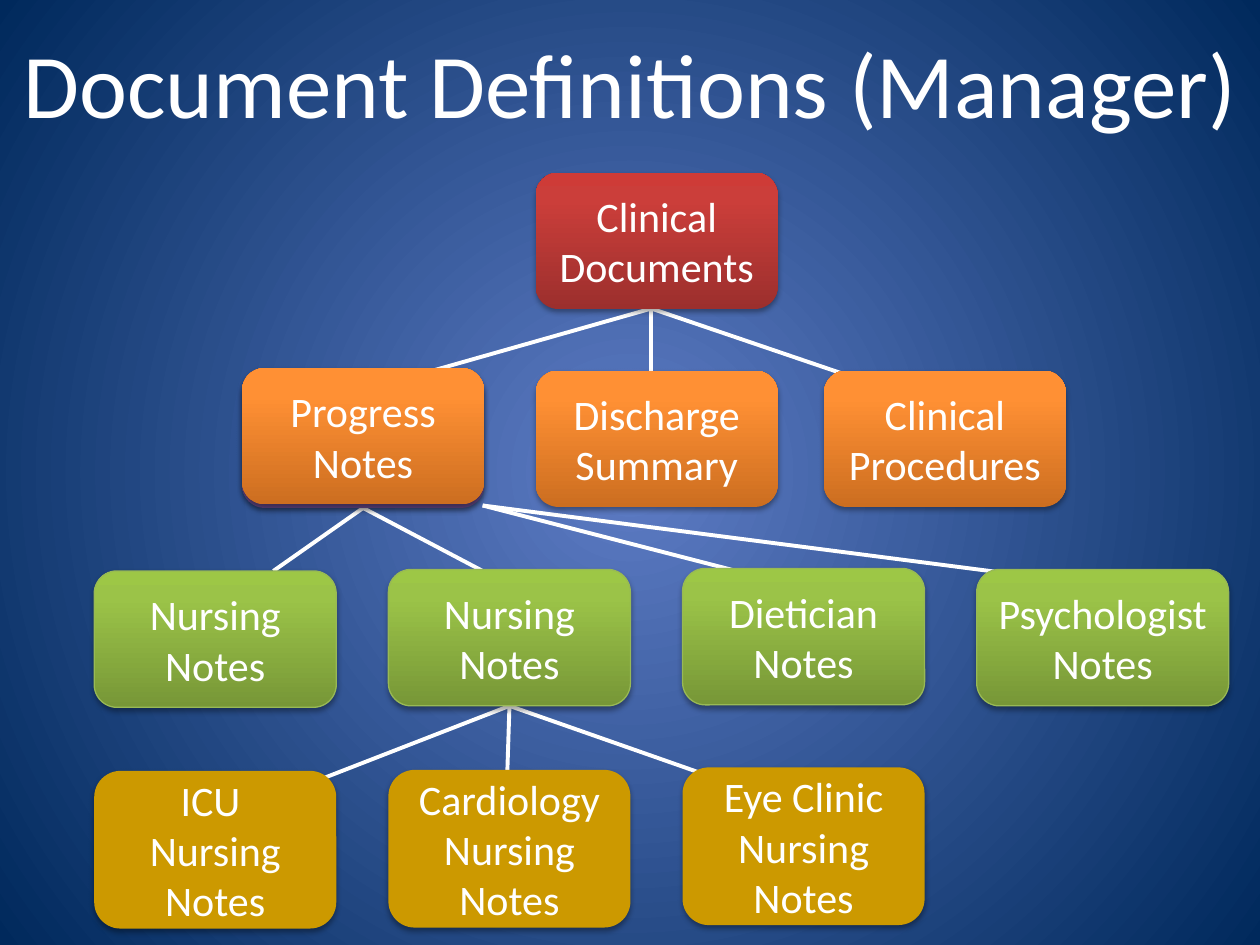
from lxml.etree import SubElement
from pptx import Presentation
from pptx.dml.color import RGBColor
from pptx.enum.shapes import MSO_CONNECTOR, MSO_SHAPE
from pptx.enum.text import MSO_ANCHOR, MSO_AUTO_SIZE, PP_ALIGN
from pptx.oxml import parse_xml
from pptx.oxml.ns import nsdecls, qn
from pptx.util import Cm, Pt

COLORS = {
    "white": "FFFFFF",
    "gold": "CC9900",
    "green_line": "98B955",
    "shadow": "000000",
}
GRADIENTS = {
    "background": {0: "5E7CC5", 100: "00295C"},
    "red": {0: "9C2F2D", 80: "CB3E3A", 100: "CE3B37"},
    "orange": {0: "CC6E20", 80: "FF9034", 100: "FF9136"},
    "purple": {0: "5F4480", 80: "7B58A6", 100: "7C57A8"},
    "green": {0: "779737", 80: "9BC348", 100: "9DC746"},
}
FONT = "Calibri"
BOX_WIDTH, BOX_HEIGHT, TALL_HEIGHT = 4.88, 2.75, 3.18
COLUMNS = [1.9 + 5.93 * index for index in range(4)]
BOTTOM = 2


def rgb(name):
    return RGBColor.from_string(COLORS[name])


def set_gradient(parent, name, direction):
    stops = "".join(
        f'<a:gs pos="{position * 1000}"><a:srgbClr val="{color}"/></a:gs>'
        for position, color in GRADIENTS[name].items()
    )
    gradient = parse_xml(
        f'<a:gradFill {nsdecls("a")} rotWithShape="1">'
        f"<a:gsLst>{stops}</a:gsLst>{direction}</a:gradFill>"
    )
    parent.replace(parent.find(qn("a:solidFill")), gradient)


def set_background(slide):
    slide.background.fill.solid()
    properties = slide.element.find(".//" + qn("p:bgPr"))
    set_gradient(
        properties,
        "background",
        '<a:path path="circle">'
        '<a:fillToRect l="50000" t="50000" r="50000" b="50000"/></a:path>',
    )


def add_shadow(shape):
    shape.shadow.inherit = False
    effects = shape.element.spPr.find(qn("a:effectLst"))
    effects.append(parse_xml(
        f'<a:outerShdw {nsdecls("a")} blurRad="40000" dist="23000" '
        f'dir="5400000" rotWithShape="0"><a:srgbClr val="{COLORS["shadow"]}">'
        '<a:alpha val="35000"/></a:srgbClr></a:outerShdw>'
    ))


def write_text(text_frame, text, size):
    text_frame.text = text
    text_frame.word_wrap = True
    for paragraph in text_frame.paragraphs:
        paragraph.alignment = PP_ALIGN.CENTER
        for run in paragraph.runs:
            run.font.name = FONT
            run.font.size = Pt(size)
            run.font.color.rgb = rgb("white")


def add_title(slide, text):
    title = slide.shapes.add_textbox(Cm(0), Cm(0.43), Cm(25.4), Cm(2.49))
    write_text(title.text_frame, text, 52)
    title.text_frame.auto_size = MSO_AUTO_SIZE.SHAPE_TO_FIT_TEXT


def add_box(slide, text, left, top, color, width=BOX_WIDTH, height=BOX_HEIGHT):
    shape = slide.shapes.add_shape(
        MSO_SHAPE.ROUNDED_RECTANGLE, Cm(left), Cm(top), Cm(width), Cm(height)
    )
    shape.fill.solid()
    if color in GRADIENTS:
        set_gradient(
            shape.element.spPr, color, '<a:lin ang="16200000" scaled="0"/>'
        )
    else:
        shape.fill.fore_color.rgb = rgb(color)
    if color == "green":
        shape.line.color.rgb = rgb("green_line")
        shape.line.width = Pt(0.75)
    else:
        shape.line.fill.background()
    add_shadow(shape)
    if text:
        shape.text_frame.vertical_anchor = MSO_ANCHOR.MIDDLE
        write_text(shape.text_frame, text, 24)
    return shape


def add_branches(slide, start, ends, parent=None):
    for end in ends:
        connector = slide.shapes.add_connector(
            MSO_CONNECTOR.STRAIGHT, *(Cm(value) for value in start + end)
        )
        if parent is not None:
            connector.begin_connect(parent, BOTTOM)
        connector.line.color.rgb = rgb("white")
        connector.line.width = Pt(2.25)
        SubElement(connector.element.spPr, qn("a:effectLst"))
        slide.shapes.element.insert(2, connector.element)


def main():
    presentation = Presentation()
    presentation.slide_width = Cm(25.4)
    presentation.slide_height = Cm(19.05)
    slide = presentation.slides.add_slide(presentation.slide_layouts[6])
    set_background(slide)
    add_title(slide, "Document Definitions (Manager)")

    add_box(slide, "Clinical Documents", 10.8, 3.48, "red")
    progress_base = add_box(slide, "", 4.88, 7.49, "purple")
    for text, left, top in [
        ("Progress Notes", 4.88, 7.42),
        ("Discharge Summary", 10.8, 7.47),
        ("Clinical Procedures", 16.61, 7.47),
    ]:
        add_box(slide, text, left, top, "orange")

    note_boxes = [
        add_box(slide, text, left, top, "green", width)
        for left, (text, top, width) in zip(COLUMNS, [
            ("Nursing Notes", 11.51, BOX_WIDTH),
            ("Nursing Notes", 11.48, BOX_WIDTH),
            ("Dietician Notes", 11.46, BOX_WIDTH),
            ("Psychologist Notes", 11.48, 5.08),
        ])
    ]
    for left, (text, top) in zip(COLUMNS, [
        ("ICU \nNursing Notes", 15.54),
        ("Cardiology Nursing Notes", 15.52),
        ("Eye Clinic Nursing Notes", 15.47),
    ]):
        add_box(slide, text, left, top, "gold", height=TALL_HEIGHT)

    add_branches(slide, (13.13, 6.22), [(x, 7.87) for x in (7.32, 13.13, 17.98)])
    add_branches(
        slide, (7.32, 10.24), [(x, 11.51) for x in (5.51, 9.73)], progress_base
    )
    add_branches(slide, (9.73, 10.19), [(x, 11.86) for x in (16.2, 22.66)])
    add_branches(
        slide, (10.27, 14.23), [(x, 16.08) for x in (5.51, 10.21, 15.54)],
        note_boxes[1],
    )
    presentation.save("out.pptx")


if __name__ == "__main__":
    main()
